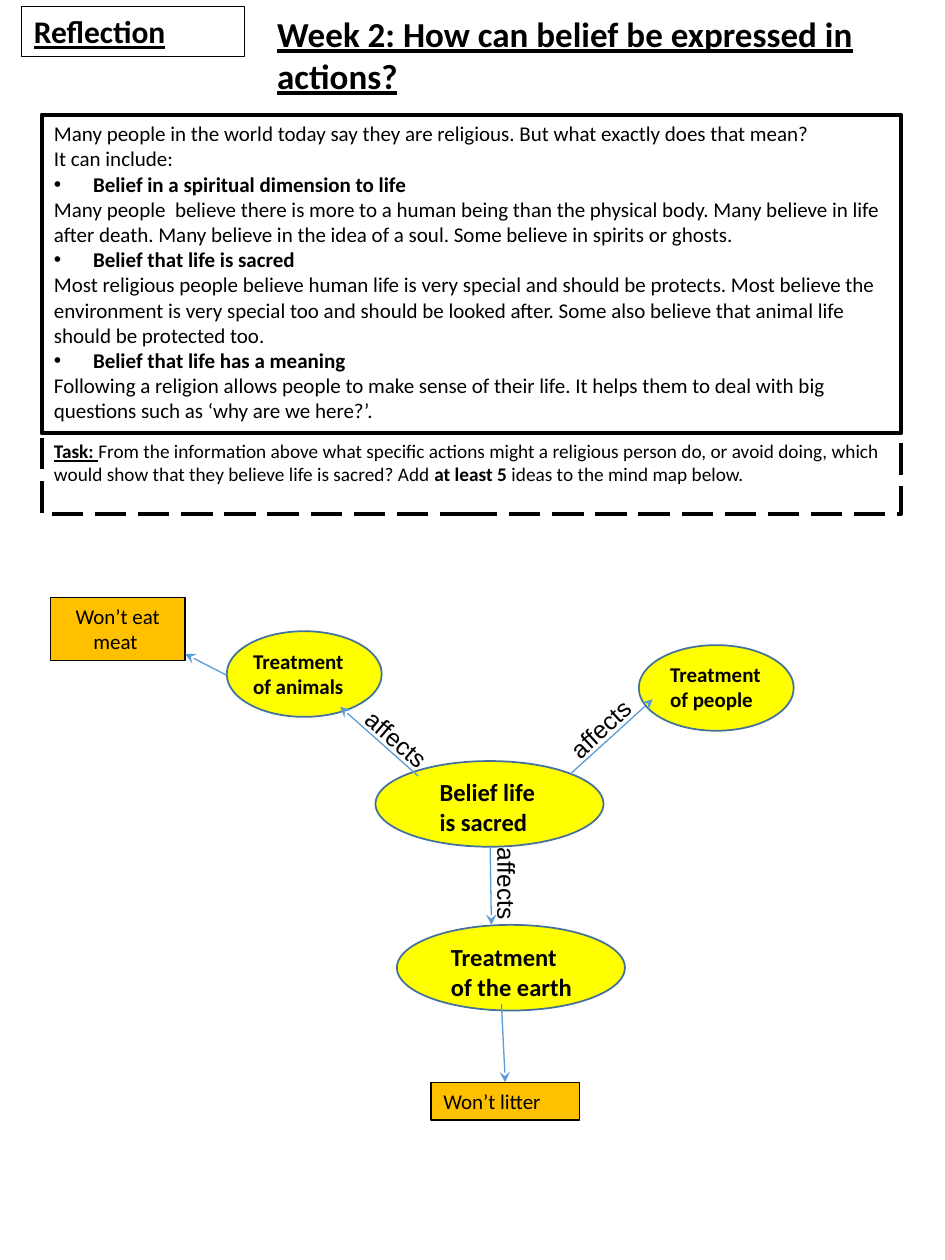
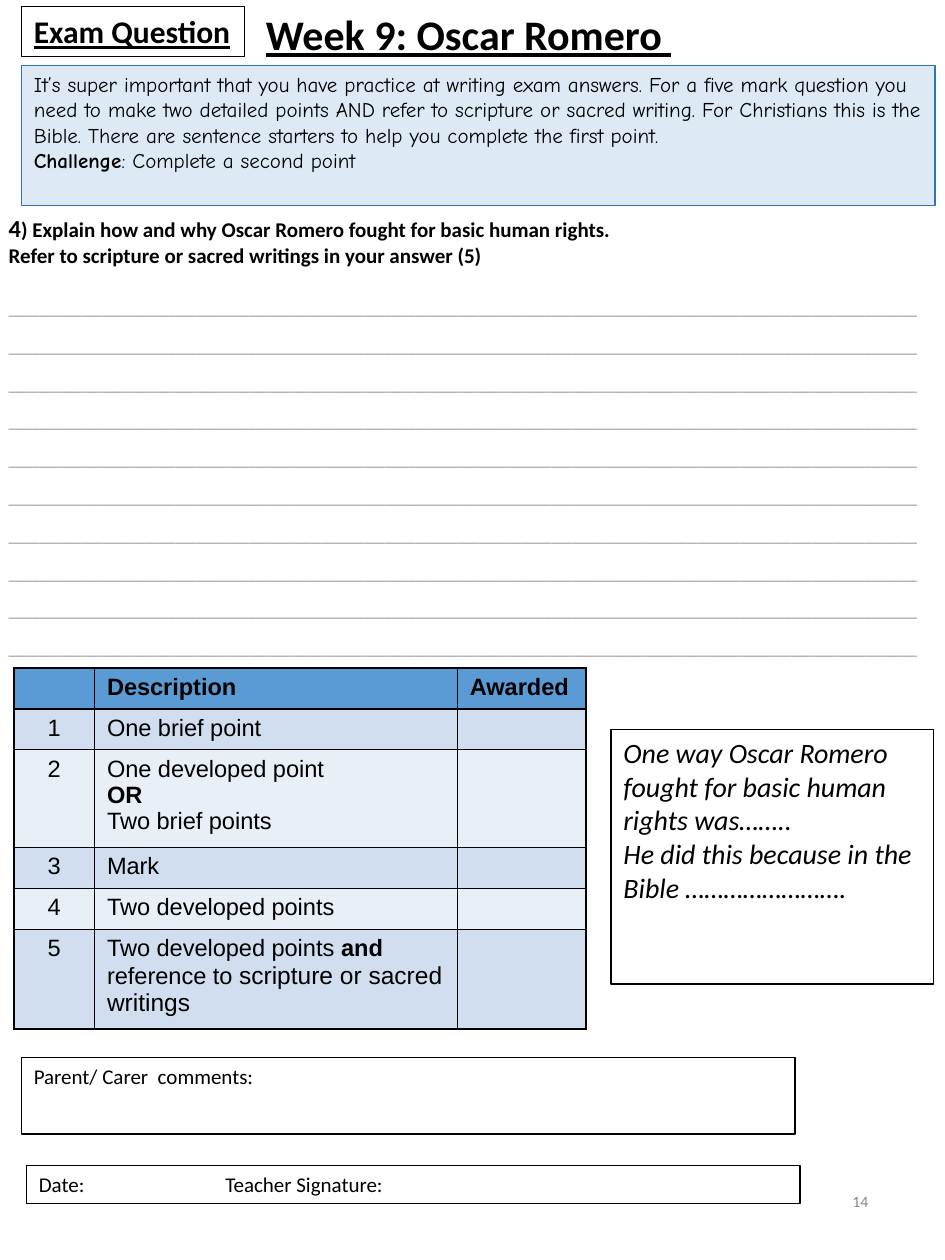
from lxml.etree import SubElement as Sub
from pptx import Presentation
from pptx.dml.color import RGBColor as Rgb
from pptx.enum.dml import MSO_LINE as Dash
from pptx.enum.shapes import MSO_CONNECTOR as Link, MSO_SHAPE as Kind
from pptx.enum.text import MSO_ANCHOR as Anchor, MSO_AUTO_SIZE as Fit, PP_ALIGN as Align
from pptx.oxml.ns import qn
from pptx.util import Inches, Pt

COLORS = {
    "ink": "000000", "rule": "A5A5A5", "page": "888888",
    "node": "FFFF00", "edge": "42719B", "idea": "FFC000", "arrow": "5B9BD5",
    "tip": "DDEAF6", "tipline": "2E75B5",
    "head": "5B9BD5", "odd": "D0DEEF", "even": "E9EFF7",
}
BOLD = {"bold": True}
TITLE = {"bold": True, "underline": True}


class Sheet:
    """Worksheet style and current slide, on a grid of 75 columns by 100 rows."""

    cols, rows = 75, 100

    def __init__(self):
        self.deck = Presentation()
        self.deck.slide_width, self.deck.slide_height = Inches(7.5), Inches(10)
        self.slide = None

    def x(self, col):
        return round(self.deck.slide_width * col / self.cols)

    def y(self, row):
        return round(self.deck.slide_height * row / self.rows)

    def place(self, box):
        left, top, width, height = box
        return self.x(left), self.y(top), self.x(width), self.y(height)

    def color(self, name):
        return Rgb.from_string(COLORS[name])

    def style(self, run, size=12, font="Calibri", color="ink", **flags):
        run.font.size, run.font.name = Pt(size), font
        run.font.color.rgb = self.color(color)
        for flag, value in flags.items():
            setattr(run.font, flag, value)

    def letter(self, frame, lines, align=Align.LEFT, space=None, **base):
        frame.word_wrap = True
        for i, line in enumerate(lines):
            para = frame.add_paragraph() if i else frame.paragraphs[0]
            para.alignment = align
            if space:
                para.line_spacing = space
            if isinstance(line, str):
                para.text = line.lstrip("•")
                if line.startswith("•"):
                    self.bullet(para)
                for run in para.runs:
                    self.style(run, **base, **(BOLD if line.startswith("•") else {}))
            else:
                for text, extra in line:
                    run = para.add_run()
                    run.text = text
                    self.style(run, **{**base, **extra})
            if not para.runs:
                Sub(para._p, qn("a:endParaRPr"), sz=str(round(base["size"] * 100)))

    def bullet(self, para):
        props = para._p.get_or_add_pPr()
        props.set("marL", str(self.x(3.1)))
        props.set("indent", str(-self.x(3.1)))
        Sub(props, qn("a:buFont"), typeface="Arial")
        Sub(props, qn("a:buChar"), char="•")

    def page(self, title, box, size, label):
        self.slide = self.deck.slides.add_slide(self.deck.slide_layouts[5])
        head = self.slide.shapes.title
        head.left, head.top, head.width, head.height = self.place(box)
        head.text_frame.auto_size = Fit.NONE
        head.text_frame.vertical_anchor = Anchor.TOP
        self.letter(head.text_frame, [title], size=size, **TITLE)
        self.shape((1.7, 0.5, 17.7, 4), [label], size=18, **TITLE)

    def shape(self, box, lines=(), kind=Kind.RECTANGLE, fill=None, line="ink",
              weight=0.75, dash=None, **text):
        item = self.slide.shapes.add_shape(kind, *self.place(box))
        item.shadow.inherit = False
        if fill:
            item.fill.solid()
            item.fill.fore_color.rgb = self.color(fill)
        else:
            item.fill.background()
        item.line.color.rgb = self.color(line)
        item.line.width = Pt(weight)
        if dash:
            item.line.dash_style = dash
        item.text_frame.vertical_anchor = Anchor.TOP
        self.letter(item.text_frame, lines, **text)
        return item

    def text(self, box, lines, anchor=Anchor.TOP, **text):
        item = self.slide.shapes.add_textbox(*self.place(box))
        item.text_frame.vertical_anchor = anchor
        self.letter(item.text_frame, lines, **text)
        return item

    def node(self, box, words, label, size):
        self.shape(box, kind=Kind.OVAL, fill="node", line="edge", weight=1)
        self.text(label, [words], size=size, bold=True)

    def idea(self, box, words, align=Align.LEFT):
        return self.shape(box, [words], fill="idea", align=align)

    def tag(self, col, row, turn):
        item = self.text((col, row, 7.8, 3.4), ["affects"], size=14, font="Arial")
        item.text_frame.word_wrap = False
        item.text_frame.auto_size = Fit.SHAPE_TO_FIT_TEXT
        item.rotation = turn

    def arrow(self, start, end, goal=None):
        item = self.slide.shapes.add_connector(
            Link.STRAIGHT, self.x(start[0]), self.y(start[1]), self.x(end[0]), self.y(end[1]))
        if goal is not None:
            item.end_connect(goal, 0)
        item.line.color.rgb = self.color("arrow")
        item.line.width = Pt(0.75)
        Sub(item.line._get_or_add_ln(), qn("a:tailEnd"), type="stealth")
        Sub(item._element.spPr, qn("a:effectLst"))

    def table(self, left, top, widths, heights, data):
        box = self.place((left, top, sum(widths), sum(heights)))
        grid = self.slide.shapes.add_table(len(heights), len(widths), *box).table
        for col, width in zip(grid.columns, widths):
            col.width = self.x(width)
        for r, (height, cells) in enumerate(zip(heights, data)):
            grid.rows[r].height = self.y(height)
            fill = "odd" if r % 2 else "even"
            for c, lines in enumerate(cells):
                cell = grid.cell(r, c)
                self.border(cell)
                cell.fill.solid()
                cell.fill.fore_color.rgb = self.color(fill if r else "head")
                align = Align.LEFT if c else Align.CENTER
                self.letter(cell.text_frame, lines, align, size=13.5, font="Arial", bold=not r)

    def border(self, cell):
        props = cell._tc.get_or_add_tcPr()
        for side in "LRTB":
            edge = Sub(props, qn(f"a:ln{side}"), w=str(Pt(1)))
            Sub(Sub(edge, qn("a:solidFill")), qn("a:srgbClr"), val=COLORS["ink"])


def belief(sheet):
    """Build the reflection page with its mind map."""
    sheet.page("Week 2: How can belief be expressed in actions?", (21, 0.5, 52, 10.4), 20,
               "Reflection")
    sheet.shape((3.3, 9.1, 68.2, 25.3), [
        "Many people in the world today say they are religious. But what exactly does that mean?",
        "It can include:",
        "•Belief in a spiritual dimension to life",
        "Many people  believe there is more to a human being than the physical body. Many believe "
        "in life after death. Many believe in the idea of a soul. Some believe in spirits or ghosts.",
        "•Belief that life is sacred",
        "Most religious people believe human life is very special and should be protects. Most "
        "believe the environment is very special too and should be looked after. Some also believe "
        "that animal life should be protected too.",
        "•Belief that life has a meaning",
        "Following a religion allows people to make sense of their life. It helps them to deal with "
        "big questions such as ‘why are we here?’.",
    ], weight=2.25)
    sheet.shape((3.3, 34.4, 68.2, 6.4), [[
        ("Task: ", TITLE),
        ("From the information above what specific actions might a religious person do, or avoid "
         "doing, which would show that they believe life is sacred? Add ", {}),
        ("at least 5 ", BOLD),
        ("ideas to the mind map below.", {}),
    ]], weight=2.25, dash=Dash.LONG_DASH, size=11)

    for box, words, label, size in [
        ((29.8, 60.4, 18.1, 6.8), "Belief life is sacred", (33.9, 61.2, 10.5, 5.7), 14),
        ((31.5, 73.4, 18.1, 6.8), "Treatment of the earth", (34.8, 74.3, 11.8, 5.7), 14),
        ((18, 50.1, 12.3, 6.8), "Treatment of animals", (19.1, 51, 10.8, 5), 12),
        ((50.7, 51.2, 12.3, 6.8), "Treatment of people", (52.2, 52, 10.2, 5), 12),
    ]:
        sheet.node(box, words, label, size)
    sheet.idea((4, 47.4, 10.7, 5), "Won’t eat meat ", Align.CENTER)
    litter = sheet.idea((34.2, 85.9, 11.8, 3), "Won’t litter")
    for start, end, goal in [
        ((38.9, 67.1), (39, 73.4), None),
        ((33.2, 61.6), (27, 56.1), None),
        ((45.3, 61.4), (51.8, 55.5), None),
        ((18, 53.6), (14.7, 51.9), None),
        ((39.8, 79.7), (40.1, 85.9), litter),
    ]:
        sheet.arrow(start, end, goal)
    for col, row, turn in [(43.8, 56.1, 317.3), (36.3, 68.5, 90), (27.6, 57, 40.8)]:
        sheet.tag(col, row, turn)


def exam(sheet):
    """Build the exam question page with its mark table."""
    sheet.page("Week 9: Oscar Romero ", (20.1, 0.2, 52.8, 5), 24, "Exam Question")
    sheet.text((53, 92.7, 16.9, 5.3), ["14"], Anchor.MIDDLE, align=Align.RIGHT, size=9,
               color="page")
    sheet.shape((1.7, 83.9, 61.4, 6.1), ["Parent/ Carer  comments:"])
    sign = sheet.shape((2.1, 92.5, 61.4, 3), ["Date:\tTeacher Signature:"])
    tabs = Sub(sign.text_frame.paragraphs[0]._p.get_or_add_pPr(), qn("a:tabLst"))
    Sub(tabs, qn("a:tab"), pos=str(sheet.x(14.8)), algn="l")
    sheet.shape((1.7, 5.2, 72.5, 11.1), [
        "It’s super important that you have practice at writing exam answers. For a five mark "
        "question you need to make two detailed points AND refer to scripture or sacred writing. "
        "For Christians this is the Bible. There are sentence starters to help you complete the "
        "first point.",
        [("Challenge", BOLD), (": Complete a second point", {})],
    ], fill="tip", line="tipline", font="Comic Neue")
    sheet.text((-0.3, 16.4, 66.1, 7.4), [
        [("4", {"size": 14}),
         (") Explain how and why Oscar Romero fought for basic human rights.", {})],
        "Refer to scripture or sacred writings in your answer (5)",
    ], bold=True)
    sheet.text((-0.3, 21.8, 74.7, 31.3), ["_" * 87] * 10, space=1.5, color="rule")
    sheet.table(1.1, 53, (6.4, 28.8, 10.2), (3.1, 3.1, 7.3, 3.1, 3.1, 7.5), [
        ([""], ["Description"], ["Awarded"]),
        (["1"], ["One brief point"], [""]),
        (["2"], ["One developed point", [("OR", BOLD)], "Two brief points"], [""]),
        (["3"], ["Mark"], [""]),
        (["4"], ["Two developed points"], [""]),
        (["5"], [[("Two developed points ", {}), ("and", BOLD), (" reference to ", {}),
                  ("scripture or sacred writings", {"size": 14})]], [""]),
    ])
    sheet.shape((48.5, 57.9, 25.6, 20.2), [
        "One way Oscar Romero fought for basic human rights was……..",
        "He did this because in the Bible …………………….",
    ], size=16, italic=True)


def main():
    """Build both pages and save them."""
    sheet = Sheet()
    belief(sheet)
    exam(sheet)
    sheet.deck.save("out.pptx")


if __name__ == "__main__":
    main()
